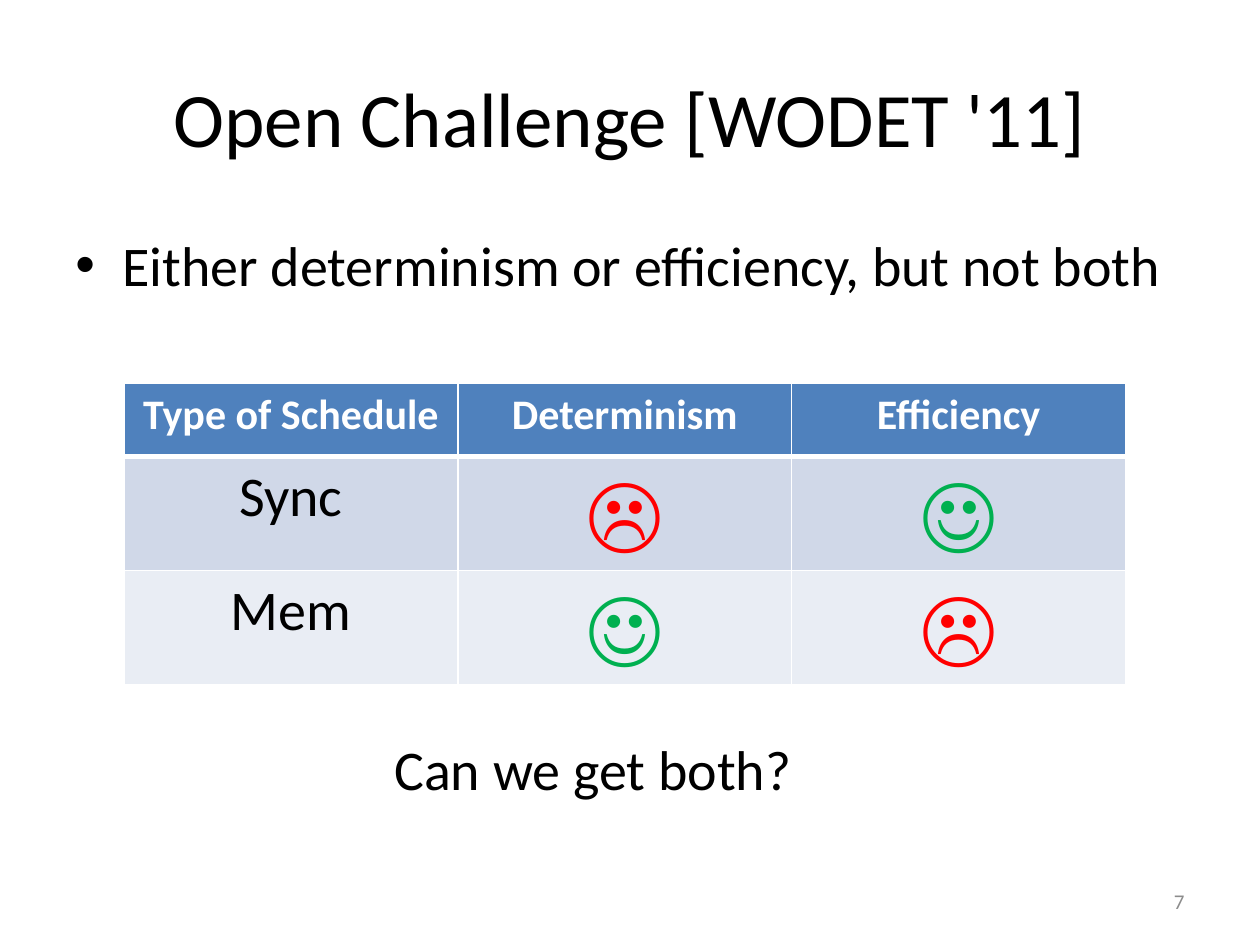
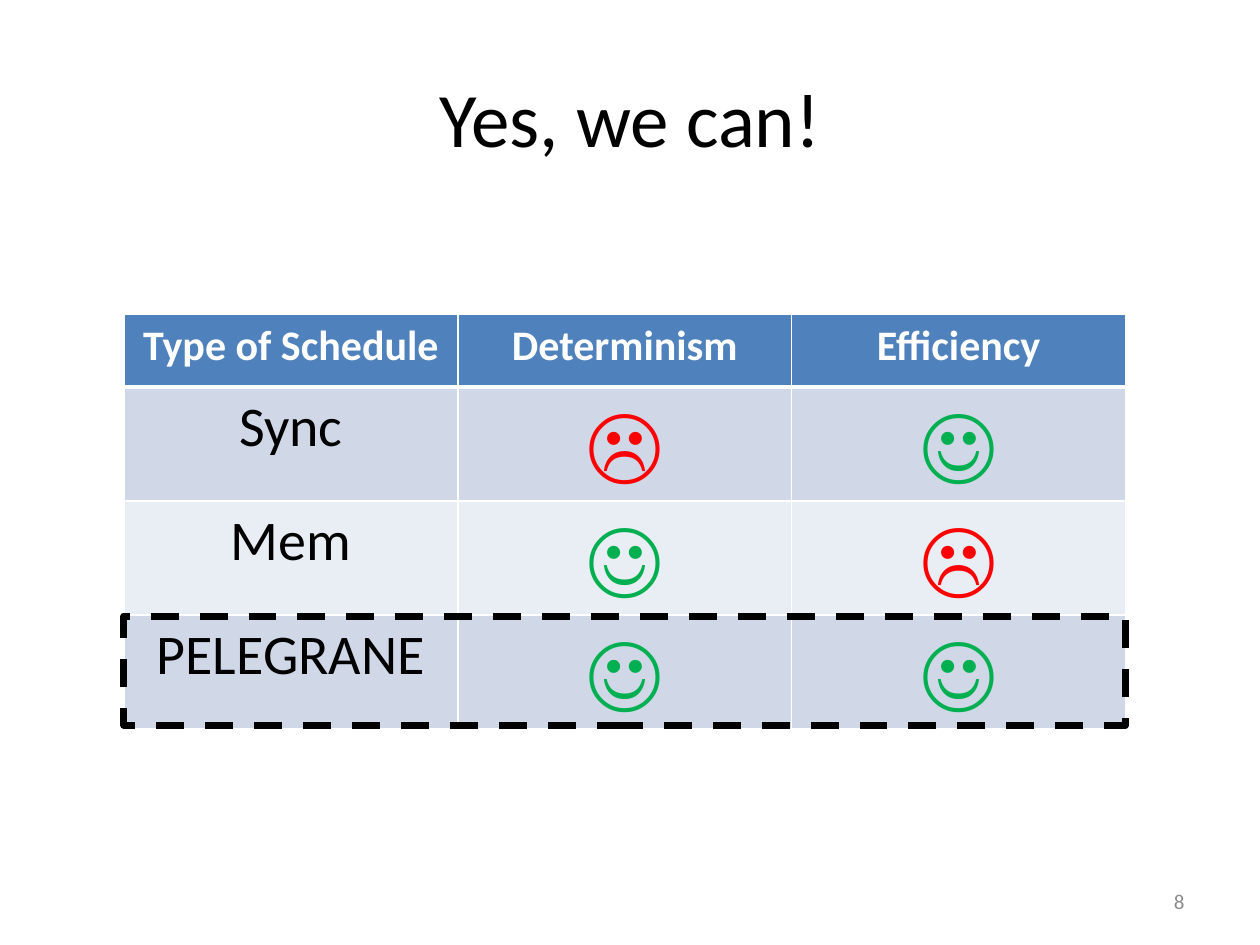
import dataclasses
import pptx
import pptx.dml.color
import pptx.enum.dml
import pptx.enum.shapes
import pptx.enum.text
import pptx.oxml
import pptx.oxml.ns
import pptx.util

Cm = pptx.util.Cm
Pt = pptx.util.Pt
ALIGN = pptx.enum.text.PP_ALIGN
ANCHOR = pptx.enum.text.MSO_ANCHOR
HEADS = ["Type of Schedule", "Determinism", "Efficiency"]
SYNC = ["Sync", "☹", "☺"]
MEM = ["Mem", "☺", "☹"]
BOTH = ["PELEGRANE", "☺", "☺"]


@dataclasses.dataclass(frozen=True)
class Theme:
    """Colours, font and type sizes of the deck."""
    font: str = "Calibri"
    ink: str = "000000"
    paper: str = "FFFFFF"
    muted: str = "8C8C8C"
    head: str = "4F81BD"
    bands: tuple = ("D0D8E8", "E9EDF4")
    good: str = "00B050"
    bad: str = "FF0000"
    title: int = 44
    body: int = 32
    label: int = 24
    mark: int = 48
    small: int = 12


THEME = Theme()


def color(code):
    """Turn a hex code into a colour."""
    return pptx.dml.color.RGBColor.from_string(code)


def write(frame, text, size, ink=THEME.ink, align=ALIGN.LEFT, bold=False):
    """Fill a text frame with one styled paragraph and return it."""
    frame.text = text
    para = frame.paragraphs[0]
    para.alignment = align
    font = para.runs[0].font
    font.name, font.size, font.bold = THEME.font, Pt(size), bold
    font.color.rgb = color(ink)
    return para


def add_text(slide, box, text, size, anchor=ANCHOR.TOP, **style):
    """Place a wrapped text box and return its paragraph."""
    frame = slide.shapes.add_textbox(*map(Cm, box)).text_frame
    frame.word_wrap = True
    frame.vertical_anchor = anchor
    return write(frame, text, size, **style)


def add_xml(parent, body):
    """Append a drawing element given as markup."""
    space = pptx.oxml.ns.nsdecls("a")
    parent.append(pptx.oxml.parse_xml(body.replace(" ns", " " + space, 1)))


def add_body(slide, box, text, bullet=False):
    """Place a body line, with a hanging bullet if asked."""
    props = add_text(slide, box, text, THEME.body)._p.get_or_add_pPr()
    add_xml(props, '<a:spcBef ns><a:spcPct val="20000"/></a:spcBef>')
    if bullet:
        props.set("marL", str(Cm(0.95)))
        props.set("indent", str(-Cm(0.95)))
        add_xml(props, '<a:buFont ns typeface="Arial"/>')
        add_xml(props, '<a:buChar ns char="•"/>')


def add_frame(slide, number, title):
    """Place the title and the slide number."""
    add_text(slide, (1.27, 0.76, 22.86, 3.18), title, THEME.title,
             ANCHOR.MIDDLE, align=ALIGN.CENTER)
    add_text(slide, (18.21, 17.65, 5.92, 1.02), str(number), THEME.small,
             ANCHOR.MIDDLE, ink=THEME.muted, align=ALIGN.RIGHT)


def edge(cell, row):
    """Rule a cell, heavier between the header and the body."""
    heavy = {0: "B", 1: "T"}.get(row)
    props = cell._tc.get_or_add_tcPr()
    for place, side in enumerate("LRTB"):
        width = Pt(3 if side == heavy else 1)
        line = pptx.oxml.parse_xml(
            f'<a:ln{side} {pptx.oxml.ns.nsdecls("a")} w="{width}"><a:solidFill>'
            f'<a:srgbClr val="{THEME.paper}"/></a:solidFill></a:ln{side}>')
        props.insert(place, line)


def add_grid(slide, box, rows):
    """Place the schedule table, a header over banded rows."""
    data = [HEADS] + rows
    grid = slide.shapes.add_table(len(data), len(HEADS), *map(Cm, box)).table
    marks = {"☺": THEME.good, "☹": THEME.bad}
    for i, words in enumerate(data):
        grid.rows[i].height = Cm(2.3 if i else 1.47)
        for j, word in enumerate(words):
            cell = grid.cell(i, j)
            if i == 0:
                fill, size, ink = THEME.head, THEME.label, THEME.paper
            else:
                fill = THEME.bands[(i - 1) % 2]
                size = THEME.mark if word in marks else THEME.body
                ink = marks.get(word, THEME.ink)
            cell.fill.solid()
            cell.fill.fore_color.rgb = color(fill)
            write(cell.text_frame, word, size, ink, ALIGN.CENTER,
                  i == 0 or word in marks)
            edge(cell, i)


def add_focus(slide, box):
    """Place a dashed outline around a table row."""
    kind = pptx.enum.shapes.MSO_SHAPE.RECTANGLE
    shape = slide.shapes.add_shape(kind, *map(Cm, box))
    shape.shadow.inherit = False
    shape.fill.background()
    shape.line.color.rgb = color(THEME.ink)
    shape.line.width = Pt(4)
    shape.line.dash_style = pptx.enum.dml.MSO_LINE.DASH


def ask(slide):
    """Build the slide that sets the challenge."""
    add_frame(slide, 7, "Open Challenge [WODET '11]")
    add_body(slide, (1.27, 4.52, 22.86, 7.47),
             "Either determinism or efficiency, but not both", True)
    add_grid(slide, (2.5, 7.73, 20.19, 6.07), [SYNC, MEM])
    add_body(slide, (7.7, 14.68, 9.6, 1.8), "Can we get both?")


def answer(slide):
    """Build the slide that answers it."""
    add_frame(slide, 8, "Yes, we can!")
    add_grid(slide, (2.5, 6.33, 20.19, 8.37), [SYNC, MEM, BOTH])
    add_focus(slide, (2.5, 12.42, 20.19, 2.2))


def main():
    """Build and save the deck."""
    deck = pptx.Presentation()
    deck.slide_width, deck.slide_height = Cm(25.4), Cm(19.05)
    for build in (ask, answer):
        build(deck.slides.add_slide(deck.slide_layouts[6]))
    deck.save("out.pptx")


if __name__ == "__main__":
    main()
